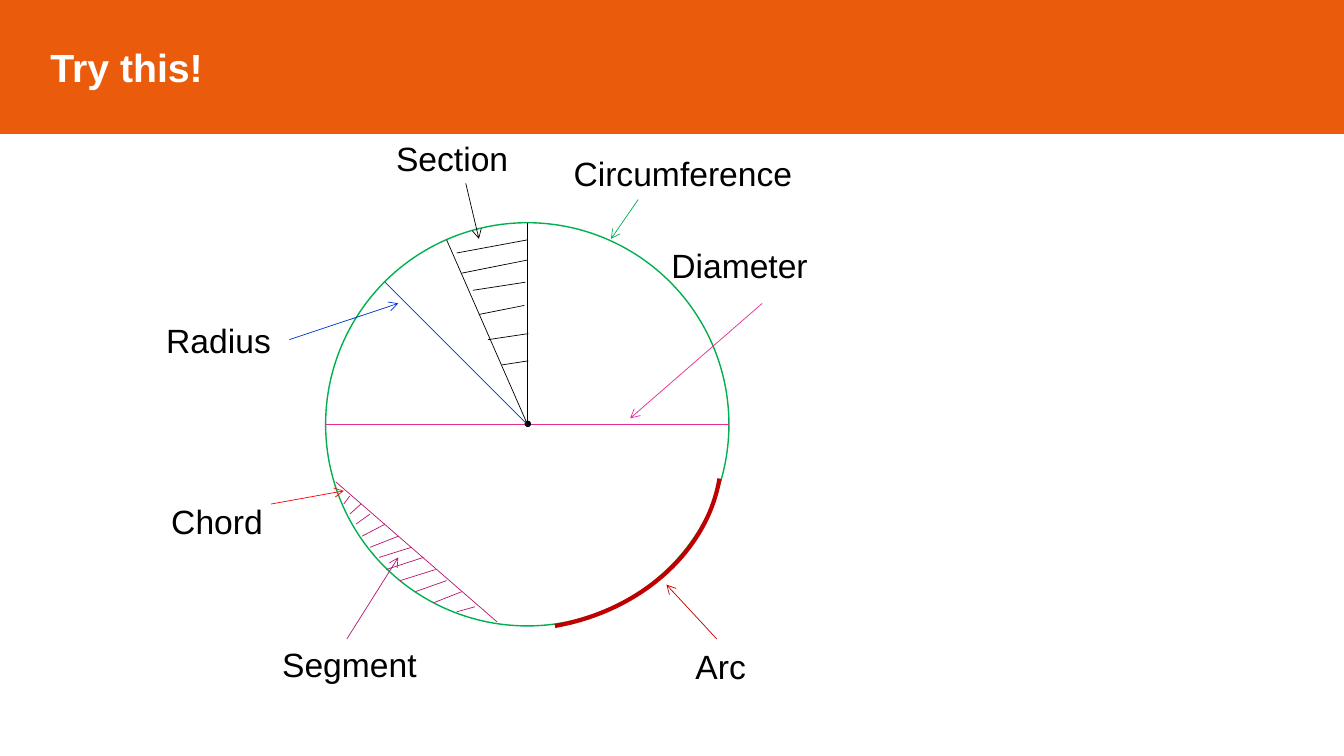
import lxml.etree
import pptx
import pptx.util
import pptx.dml.color
import pptx.enum.shapes
import pptx.enum.text
import pptx.oxml.ns

SCALE = 9144  # EMU in one px, 100 px to the inch
INK = {
    "orange": "EA5B0C", "white": "FFFFFF", "black": "000000",
    "green": "00B050", "pink": "E32D91", "plum": "B4186E",
    "blue": "0033CC", "red": "FF0000", "brick": "C00000",
}
KIND = pptx.enum.shapes.MSO_SHAPE
QN = pptx.oxml.ns.qn

# Label text, left, top, width
LABELS = [
    ("Circumference", 559, 147, 262),
    ("Diameter", 656, 238, 262),
    ("Arc", 680, 636, 106),
    ("Radius", 155, 312, 132),
    ("Chord", 160, 492, 131),
    ("Segment", 270, 634, 173),
    ("Section", 383, 132, 262),
]
# Ends of each pointer and its colour
ARROWS = [
    ((633, 198, 606, 237), "green"),
    ((756, 301, 625, 415), "pink"),
    ((711, 634, 661, 580), "brick"),
    ((269, 500, 341, 487), "red"),
    ((344, 634, 395, 553), "plum"),
    ((462, 182, 475, 237), "black"),
]
# Strokes that shade the segment
SEGMENT = [
    (341, 500, 347, 492), (347, 510, 358, 500), (353, 520, 367, 510),
    (359, 532, 382, 520), (367, 543, 395, 532), (376, 553, 408, 543),
    (383, 565, 420, 553), (397, 576, 432, 565), (412, 587, 443, 576),
    (430, 598, 458, 587), (453, 607, 471, 602),
]
# Two sides of the section, then the strokes that shade it
SECTION = [
    (524, 423, 443, 238), (523, 423, 523, 221),
    (453, 251, 523, 238), (458, 271, 523, 258), (469, 288, 521, 280),
    (475, 312, 520, 303), (484, 337, 524, 331), (498, 362, 524, 358),
]


def px(*nums):
    return [pptx.util.Emu(n * SCALE) for n in nums]


def tint(name):
    return pptx.dml.color.RGBColor.from_string(INK[name])


def style(para, size, color, bold=False):
    font = para.font
    font.name = "Arial"
    font.size = pptx.util.Pt(size)
    font.bold = bold
    font.color.rgb = tint(color)


def paint(shape, fill, edge, width=1):
    if fill:
        shape.fill.solid()
        shape.fill.fore_color.rgb = tint(fill)
    else:
        shape.fill.background()
    shape.line.color.rgb = tint(edge)
    shape.line.width = pptx.util.Pt(width)
    shape.shadow.inherit = False


def banner(slide, text):
    title = slide.shapes.title
    title.left, title.top, title.width, title.height = px(0, 0, 1333, 132)
    paint(title, "orange", "orange")
    frame = title.text_frame
    frame.text = text
    frame.auto_size = pptx.enum.text.MSO_AUTO_SIZE.NONE
    frame.vertical_anchor = pptx.enum.text.MSO_ANCHOR.MIDDLE
    frame.margin_left = px(50)[0]
    para = frame.paragraphs[0]
    para.alignment = pptx.enum.text.PP_ALIGN.LEFT
    style(para, 28, "white", True)


def label(slide, text, left, top, width):
    box = slide.shapes.add_textbox(*px(left, top, width, 50))
    frame = box.text_frame
    frame.word_wrap = True
    frame.text = text
    style(frame.paragraphs[0], 24, "black")
    return box


def line(shapes, ends, color, width=0.5, arrow=False):
    kind = pptx.enum.shapes.MSO_CONNECTOR.STRAIGHT
    stroke = shapes.add_connector(kind, *px(*ends))
    stroke.line.color.rgb = tint(color)
    stroke.line.width = pptx.util.Pt(width)
    props = stroke._element.spPr
    if arrow:
        edge = props.find(QN("a:ln"))
        lxml.etree.SubElement(edge, QN("a:tailEnd"), type="arrow")
    lxml.etree.SubElement(props, QN("a:effectLst"))
    return stroke


def hatch(slide, rows, color):
    group = slide.shapes.add_group_shape()
    for ends in rows:
        line(group.shapes, ends, color)


def main():
    deck = pptx.Presentation()
    deck.slide_width, deck.slide_height = px(1333, 750)
    slide = deck.slides.add_slide(deck.slide_layouts[5])
    shapes = slide.shapes
    banner(slide, "Try this!")

    # Circle, its thick arc and its centre
    circle = shapes.add_shape(KIND.OVAL, *px(323, 221, 400, 400))
    paint(circle, "white", "green")
    arc = shapes.add_shape(KIND.ARC, *px(354, 262, 329, 395))
    arc.adjustments[0], arc.adjustments[1] = 169.12, 213.73
    arc.rotation = 82.6
    paint(arc, None, "brick", 3)
    line(shapes, (323, 421, 723, 421), "pink", 1)
    dot = shapes.add_shape(KIND.OVAL, *px(521, 418, 5, 5))
    paint(dot, "black", "black")

    # Radius, chord and shaded parts
    line(shapes, (525, 423, 382, 280), "blue")
    line(shapes, (333, 478, 493, 617), "plum")
    hatch(slide, SEGMENT, "plum")
    hatch(slide, SECTION, "black")

    # Labels and pointers
    boxes = {row[0]: label(slide, *row) for row in LABELS}
    for ends, color in ARROWS:
        line(shapes, ends, color, arrow=True)
    ray = line(shapes, (287, 337, 395, 301), "blue", arrow=True)
    ray.begin_connect(boxes["Radius"], 3)

    deck.save("out.pptx")


if __name__ == "__main__":
    main()
